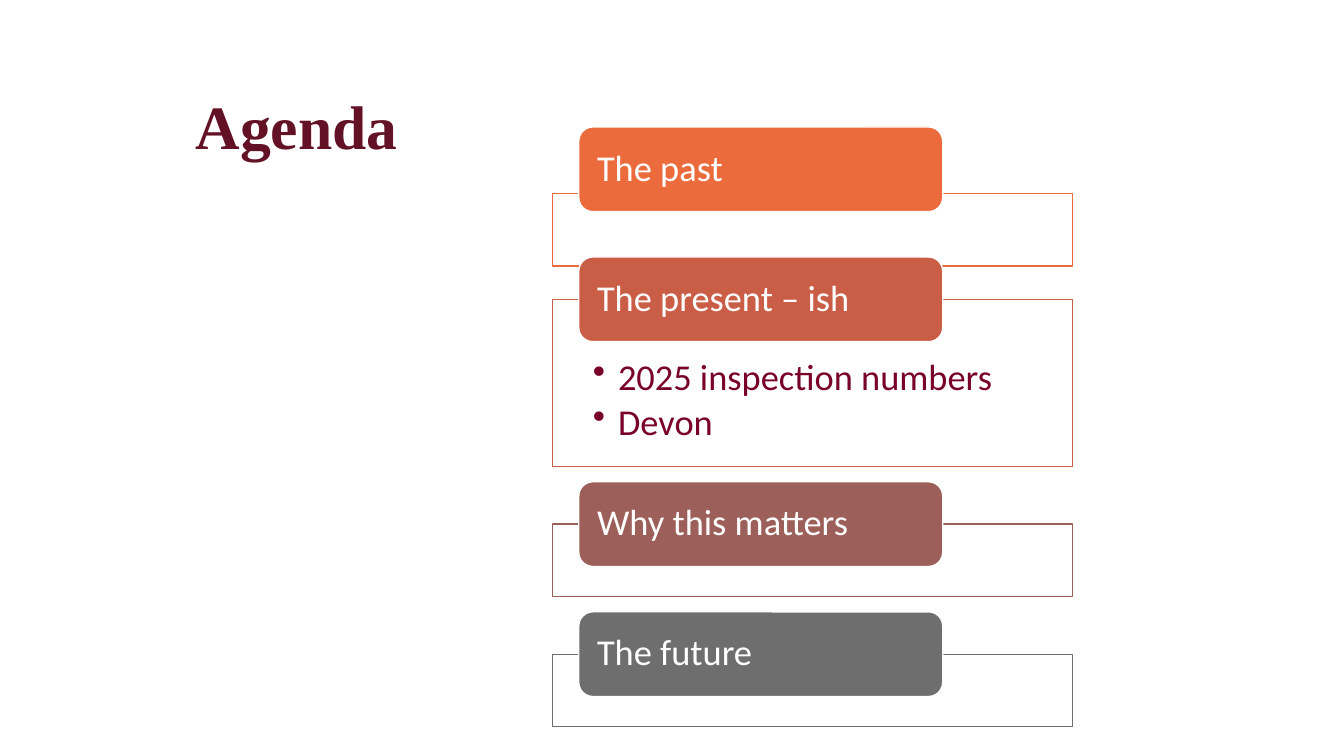
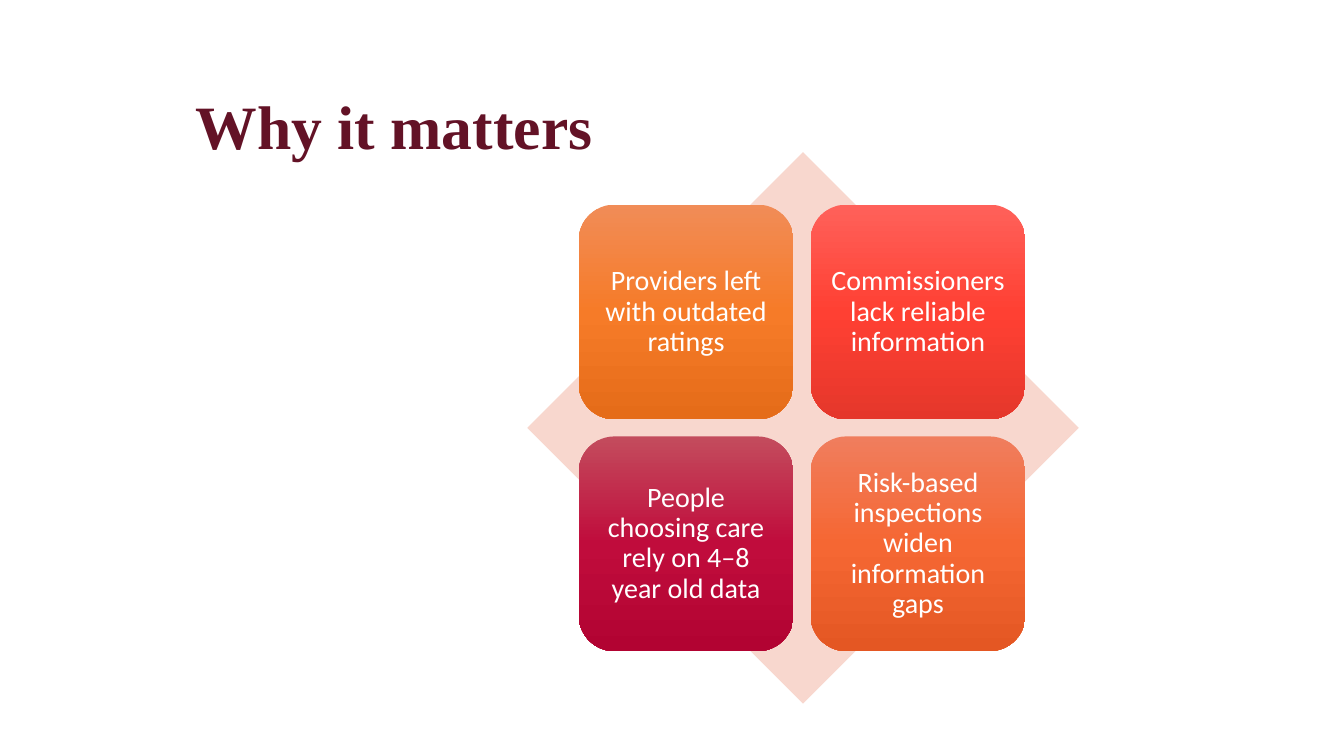
import copy

import lxml.etree
import pptx
import pptx.dml.color
import pptx.enum.shapes
import pptx.enum.text
import pptx.oxml.ns
import pptx.util

Inches = pptx.util.Inches
Pt = pptx.util.Pt
Shape = pptx.enum.shapes.MSO_SHAPE
Anchor = pptx.enum.text.MSO_ANCHOR
Align = pptx.enum.text.PP_ALIGN
qn = pptx.oxml.ns.qn

INK = {
    "white": "FFFFFF", "title": "631226", "point": "790028",
    "orange": "EC6B3C", "rust": "C95D46", "clay": "9C5F59", "grey": "6E6E6E",
    "blush": "F8D7CE",
    "amber top": "F18C57", "amber mid": "F67B28", "amber end": "E56C19",
    "red top": "FF615A", "red mid": "FF4033", "red end": "E5372B",
    "wine top": "C34C5D", "wine mid": "C00C3C", "wine end": "B20332",
    "coral top": "F07D5D", "coral mid": "F56733", "coral end": "E45723",
}

STYLE = {
    "title": {
        "frame": {"vertical_anchor": Anchor.MIDDLE, "word_wrap": True,
                  "auto_size": pptx.enum.text.MSO_AUTO_SIZE.SHAPE_TO_FIT_TEXT},
        "pad": (0, 0.01, 0, 0),
        "para": {"alignment": Align.LEFT, "line_spacing": 0.9},
        "font": {"name": "Times New Roman", "size": Pt(44), "bold": True},
        "ink": "title",
    },
    "label": {
        "frame": {"vertical_anchor": Anchor.MIDDLE, "word_wrap": True},
        "pad": (0.14, 0, 0.14, 0),
        "para": {"alignment": Align.LEFT, "line_spacing": 0.9},
        "font": {"name": "Calibri", "size": Pt(26)},
        "ink": "white",
    },
    "point": {
        "frame": {"vertical_anchor": Anchor.TOP, "word_wrap": True},
        "pad": (0.4, 0.59, 0.4, 0.2),
        "para": {"alignment": Align.LEFT, "line_spacing": 0.9,
                 "space_after": Pt(4), "level": 1},
        "font": {"name": "Calibri", "size": Pt(26)},
        "ink": "point",
        "bullet": "•",
    },
    "tile": {
        "frame": {"vertical_anchor": Anchor.MIDDLE, "word_wrap": True},
        "pad": (0.08, 0.08, 0.08, 0.08),
        "para": {"alignment": Align.CENTER, "line_spacing": 0.9},
        "font": {"name": "Calibri", "size": Pt(20)},
        "ink": "white",
    },
}


def tint(name):
    return pptx.dml.color.RGBColor.from_string(INK[name])


def apply(item, values):
    for key, value in values.items():
        setattr(item, key, value)


class Deck:
    def __init__(self):
        self.file = pptx.Presentation()
        apply(self.file, {"slide_width": Inches(13.33), "slide_height": Inches(7.5)})
        self.slide = None

    def page(self, title):
        self.slide = self.file.slides.add_slide(self.file.slide_layouts[5])
        head = self.slide.shapes.title
        apply(head, {"left": Inches(1.94), "top": Inches(0.94),
                     "width": Inches(10.36), "height": Inches(0.68)})
        self.letter(head, [title], "title")

    def letter(self, shape, lines, kind):
        style = STYLE[kind]
        frame = shape.text_frame
        apply(frame, style["frame"])
        sides = ("margin_left", "margin_top", "margin_right", "margin_bottom")
        apply(frame, dict(zip(sides, map(Inches, style["pad"]))))
        for index, line in enumerate(lines):
            para = frame.add_paragraph() if index else frame.paragraphs[0]
            apply(para, style["para"])
            if "bullet" in style:
                self.bullet(para, style["bullet"])
            run = para.add_run()
            run.text = line
            apply(run.font, style["font"])
            run.font.color.rgb = tint(style["ink"])

    def bullet(self, para, mark):
        props = para._p.get_or_add_pPr()
        props.set("marL", str(Inches(0.25)))
        props.set("indent", str(Inches(-0.25)))
        lxml.etree.SubElement(props, qn("a:buChar")).set("char", mark)

    def shape(self, form, left, top, width, height, fill=None, line=None):
        item = self.slide.shapes.add_shape(
            form, Inches(left), Inches(top), Inches(width), Inches(height))
        item.shadow.inherit = False
        if fill:
            item.fill.solid()
            item.fill.fore_color.rgb = tint(fill)
        if line:
            item.line.color.rgb = tint(line)
            item.line.width = Pt(1)
        else:
            item.line.fill.background()
        return item

    def frame(self, left, top, width, height, line, points):
        item = self.shape(Shape.RECTANGLE, left, top, width, height, "white", line)
        color = item.element.spPr.find(qn("a:solidFill")).find(qn("a:srgbClr"))
        lxml.etree.SubElement(color, qn("a:alpha")).set("val", "90000")
        if points:
            self.letter(item, points, "point")

    def chip(self, left, top, width, height, fill, text):
        item = self.shape(Shape.ROUNDED_RECTANGLE, left, top, width, height, fill, "white")
        self.letter(item, [text], "label")

    def tile(self, left, top, size, hue, text):
        item = self.shape(Shape.ROUNDED_RECTANGLE, left, top, size, size)
        item.fill.gradient()
        item.fill.gradient_angle = 270
        stops = item.element.spPr.find(qn("a:gradFill")).find(qn("a:gsLst"))
        stops.insert(1, copy.deepcopy(stops[0]))
        for stop, place, part in zip(item.fill.gradient_stops, (0, 0.5, 1),
                                     ("top", "mid", "end")):
            stop.position = place
            stop.color.rgb = tint(f"{hue} {part}")
        self.letter(item, [text], "tile")


def agenda(deck):
    deck.page("Agenda")
    rows = [
        ("The past", "orange", 0.66, 0.72, []),
        ("The present – ish", "rust", 0.42, 1.66, ["2025 inspection numbers", "Devon"]),
        ("Why this matters", "clay", 0.42, 0.72, []),
        ("The future", "grey", 0.42, 0.72, []),
    ]
    top = 1.26
    for text, hue, drop, height, points in rows:
        deck.frame(5.48, top + drop, 5.16, height, hue, points)
        deck.chip(5.74, top, 3.61, 0.84, hue, text)
        top += height + 0.57


def matters(deck):
    deck.page("Why it matters")
    deck.shape(Shape.DIAMOND, 5.23, 1.51, 5.47, 5.47, "blush")
    tiles = [
        ("amber", "Providers left with outdated ratings"),
        ("red", "Commissioners lack reliable information"),
        ("wine", "People choosing care rely on 4–8 year old data"),
        ("coral", "Risk-based inspections widen information gaps"),
    ]
    for index, (hue, text) in enumerate(tiles):
        row, col = divmod(index, 2)
        deck.tile(5.74 + 2.3 * col, 2.03 + 2.3 * row, 2.13, hue, text)


def main():
    deck = Deck()
    agenda(deck)
    matters(deck)
    deck.file.save("out.pptx")


if __name__ == "__main__":
    main()
